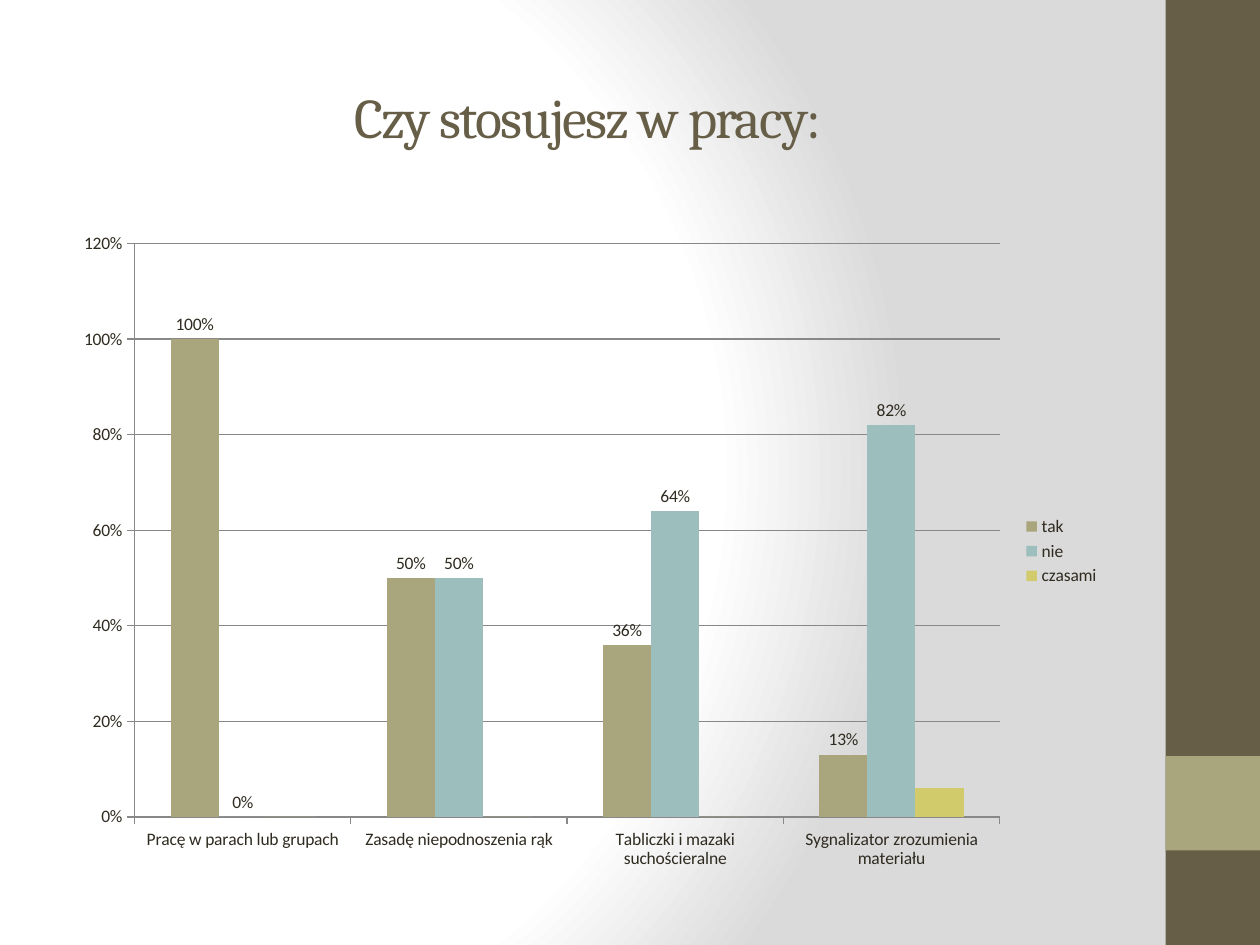
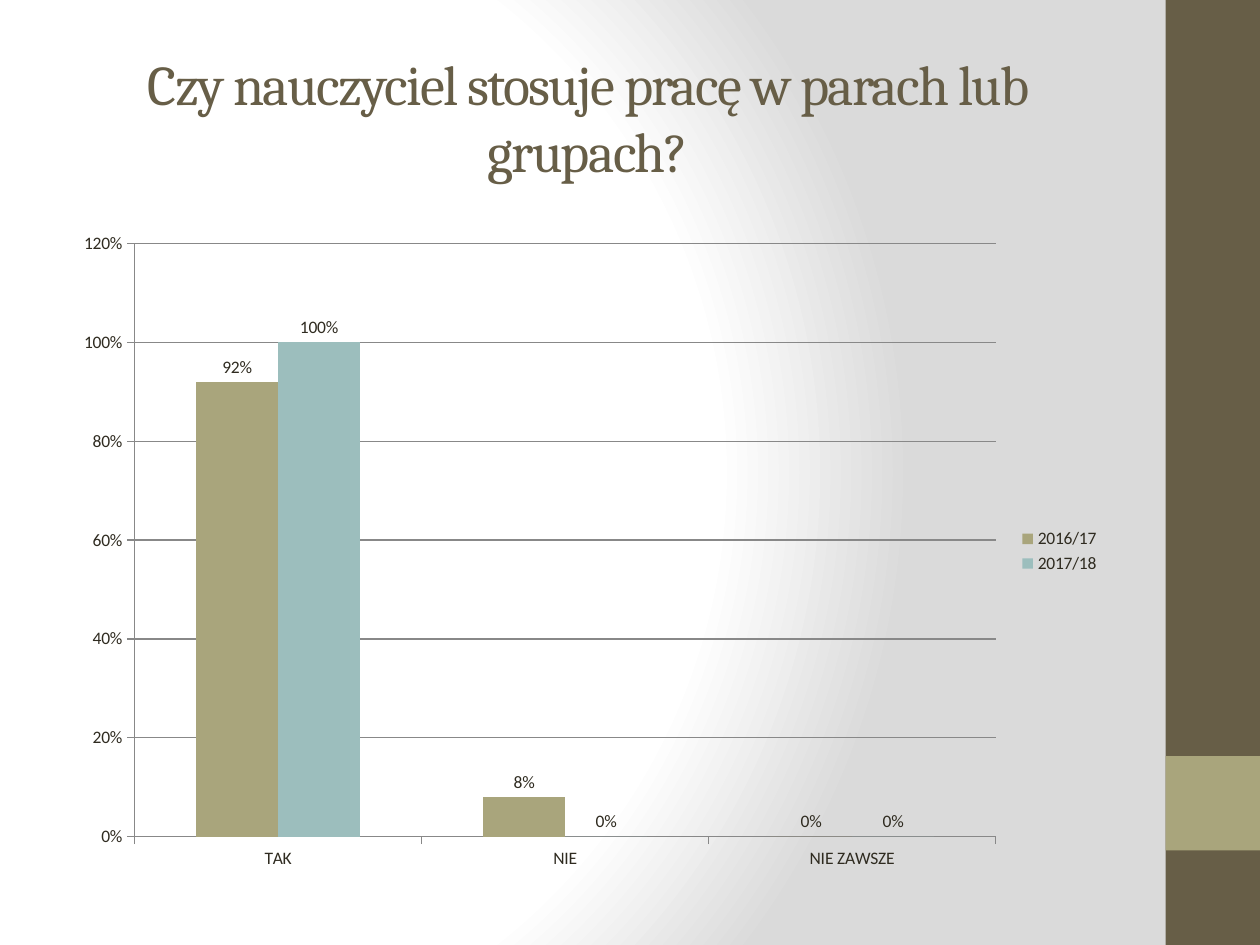
from pptx import Presentation
from pptx.chart.data import CategoryChartData
from pptx.dml.color import RGBColor
from pptx.enum.chart import XL_CHART_TYPE as ChartType, XL_LABEL_POSITION as LabelPosition
from pptx.enum.chart import XL_LEGEND_POSITION as LegendPosition, XL_TICK_MARK as TickMark
from pptx.enum.shapes import MSO_SHAPE as Preset
from pptx.enum.text import MSO_ANCHOR as Anchor, PP_ALIGN as Align
from pptx.oxml import parse_xml
from pptx.oxml.ns import nsdecls, qn
from pptx.util import Inches, Pt

CELL = Inches(0.25)
COLUMNS, ROWS = 40, 30
BROWN, OLIVE, TEAL, YELLOW = "675E47", "A9A57C", "9CBEBD", "D2CB6C"
INK, AXIS_GRAY, WHITE, LIGHT_GRAY = "2F2B20", "888888", "FFFFFF", "DADADA"
TITLE_FONT, BODY_FONT = "Cambria", "Calibri"
CONTENT_LEFT, CONTENT_WIDTH = 2, 33.32
PERCENT = "0%"


def color(hex_code):
    return RGBColor.from_string(hex_code)


def cells(*lengths):
    """Turn grid columns and rows into slide lengths."""
    return [round(length * CELL) for length in lengths]


class SurveyDeck:
    """Holds the survey style and the slide being built."""

    def __init__(self):
        self.deck = Presentation()
        self.deck.slide_width, self.deck.slide_height = cells(COLUMNS, ROWS)
        self.slide = None

    def new_slide(self, heading):
        self.slide = self.deck.slides.add_slide(self.deck.slide_layouts[6])
        self.background()
        self.band(0, ROWS, BROWN)
        self.band(24, 3, OLIVE)
        self.title(heading)

    def background(self):
        self.slide.background.fill.solid()
        properties = self.slide.element.find(".//" + qn("p:bgPr"))
        stops = "".join(
            f'<a:gs pos="{share * 1000}"><a:srgbClr val="{shade}"/></a:gs>'
            for share, shade in ((0, WHITE), (75, WHITE), (100, LIGHT_GRAY)))
        glow = parse_xml(
            f'<a:gradFill {nsdecls("a")} rotWithShape="1"><a:gsLst>{stops}</a:gsLst>'
            '<a:path path="circle"><a:fillToRect l="20000" t="50000" r="100000" b="50000"/>'
            '</a:path></a:gradFill>')
        properties.replace(properties[0], glow)

    def band(self, top, height, fill):
        """Draw a block of the right-hand edge strip."""
        block = self.slide.shapes.add_shape(
            Preset.RECTANGLE, *cells(COLUMNS - 3, top, 3, height))
        block.shadow.inherit = False
        block.fill.solid()
        block.fill.fore_color.rgb = color(fill)
        block.line.fill.background()

    def title(self, heading):
        frame = self.slide.shapes.add_textbox(
            *cells(CONTENT_LEFT, 1.2, CONTENT_WIDTH, 5)).text_frame
        frame.word_wrap = True
        frame.vertical_anchor = Anchor.MIDDLE
        frame.text = heading
        line = frame.paragraphs[0]
        line.alignment = Align.CENTER
        run = line.runs[0]
        run.font.name, run.font.size = TITLE_FONT, Pt(32)
        run.font.color.rgb = color(BROWN)
        run.font._element.set("spc", "-100")

    def column_chart(self, answers, results):
        """Each result is a series name, its values, its colour and whether it is labelled."""
        data = CategoryChartData(number_format=PERCENT)
        data.categories = answers
        for name, shares, _, _ in results:
            data.add_series(name, shares)
        chart = self.slide.shapes.add_chart(
            ChartType.COLUMN_CLUSTERED,
            *cells(CONTENT_LEFT, 7, CONTENT_WIDTH, 21), data).chart
        chart.has_title = False
        chart.font.name, chart.font.size = BODY_FONT, Pt(10)
        chart.font.color.rgb = color(INK)
        chart.has_legend = True
        chart.legend.position = LegendPosition.RIGHT
        chart.legend.include_in_layout = False
        self.axes(chart)

        plot = chart.plots[0]
        plot.gap_width, plot.overlap = 150, 0
        plot.vary_by_categories = False
        for series, (_, _, fill, labelled) in zip(plot.series, results):
            series.format.fill.solid()
            series.format.fill.fore_color.rgb = color(fill)
            series.invert_if_negative = False
            if labelled:
                labels = series.data_labels
                labels.show_value = True
                labels.number_format = PERCENT
                labels.number_format_is_linked = False
                labels.position = LabelPosition.OUTSIDE_END

    def axes(self, chart):
        share_axis, answer_axis = chart.value_axis, chart.category_axis
        share_axis.minimum_scale, share_axis.maximum_scale = 0, 1.2
        share_axis.major_unit = 0.2
        share_axis.has_major_gridlines = True
        share_axis.tick_labels.number_format = PERCENT
        share_axis.tick_labels.number_format_is_linked = False
        for axis in (share_axis, answer_axis):
            axis.major_tick_mark = TickMark.OUTSIDE
            axis.minor_tick_mark = TickMark.NONE
        for ruled in (share_axis, answer_axis, share_axis.major_gridlines):
            ruled.format.line.color.rgb = color(AXIS_GRAY)
            ruled.format.line.width = Pt(0.75)


def main():
    survey = SurveyDeck()

    survey.new_slide("Czy stosujesz w pracy:")
    survey.column_chart(
        ["Pracę w parach lub grupach", "Zasadę niepodnoszenia rąk",
         "Tabliczki i mazaki suchościeralne", "Sygnalizator zrozumienia materiału"],
        [("tak", (1, 0.5, 0.36, 0.13), OLIVE, True),
         ("nie", (0, 0.5, 0.64, 0.82), TEAL, True),
         ("czasami", (0, 0, 0, 0.06), YELLOW, False)])

    survey.new_slide("Czy nauczyciel stosuje pracę w parach lub grupach?")
    survey.column_chart(
        ["TAK", "NIE", "NIE ZAWSZE"],
        [("2016/17", (0.92, 0.08, 0), OLIVE, True),
         ("2017/18", (1, 0, 0), TEAL, True)])

    survey.deck.save("out.pptx")


if __name__ == "__main__":
    main()
